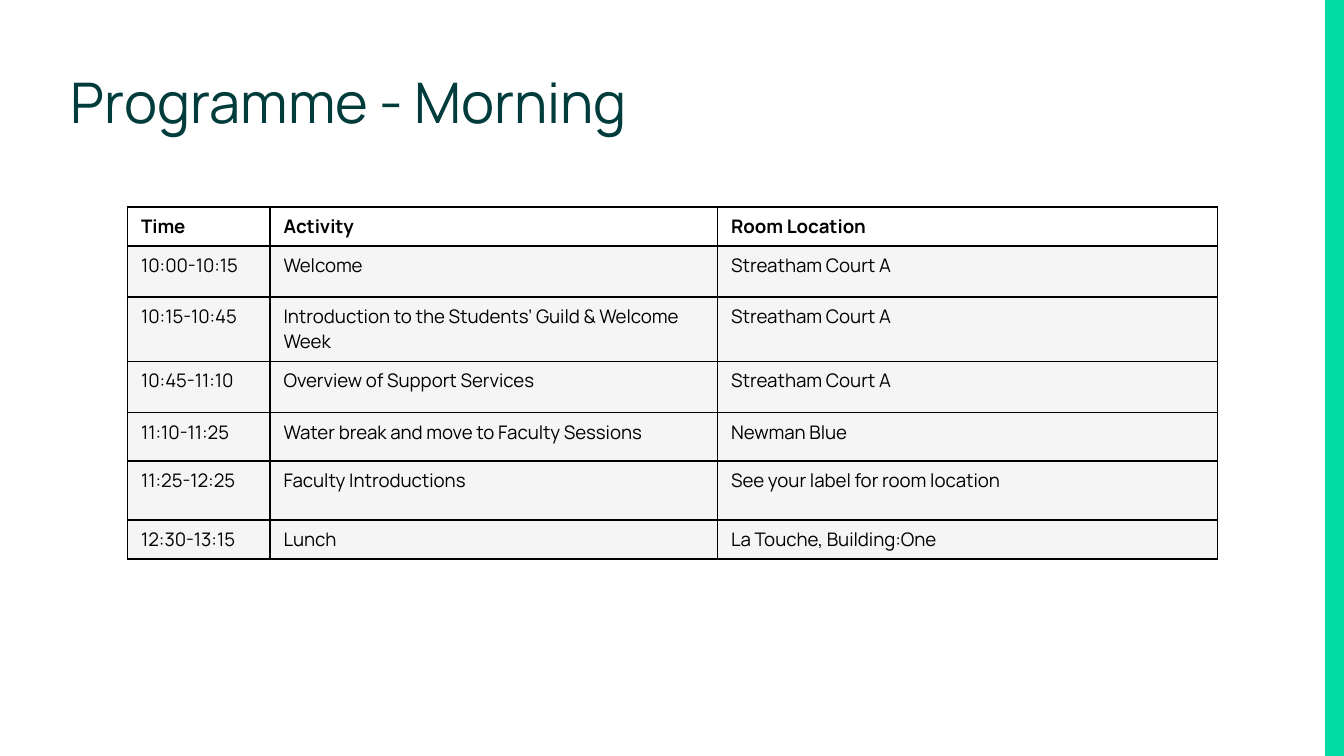
from typing import NamedTuple

from lxml import etree
from pptx import Presentation
from pptx.dml.color import RGBColor
from pptx.enum.shapes import MSO_SHAPE
from pptx.enum.text import MSO_ANCHOR
from pptx.oxml.ns import qn
from pptx.util import Inches, Pt

RECTANGLE = MSO_SHAPE.RECTANGLE
MIDDLE = MSO_ANCHOR.MIDDLE

WHITE = RGBColor(0xFF, 0xFF, 0xFF)
BLACK = RGBColor(0x00, 0x00, 0x00)
GREY = RGBColor(0xF5, 0xF5, 0xF5)
GREEN = RGBColor(0x01, 0xDC, 0xA5)
TEAL = RGBColor(0x00, 0x3C, 0x3B)

FONT = "Manrope"
SLIDE_W = 10
SLIDE_H = SLIDE_W * 9 / 16
BAR_W = 0.14
TABLE_LEFT, TABLE_TOP = 0.95, 1.54
COLUMN_WIDTHS = (1.06, 3.33, 3.72)
HEADINGS = ("Time", "Activity", "Room Location")
HEADER_H = 0.29


class Session(NamedTuple):
    time: str
    activity: str
    room: str
    height: float


SESSIONS = (
    Session("10:00-10:15", "Welcome", "Streatham Court A", 0.38),
    Session("10:15-10:45", "Introduction to the Students’ Guild & Welcome Week",
            "Streatham Court A", 0.48),
    Session("10:45-11:10", "Overview of Support Services", "Streatham Court A", 0.38),
    Session("11:10-11:25", "Water break and move to Faculty Sessions", "Newman Blue", 0.36),
    Session("11:25-12:25", "Faculty Introductions", "See your label for room location", 0.44),
    Session("12:30-13:15", "Lunch", "La Touche, Building:One", 0.29),
)


def style_text(p, size: float, color: RGBColor, bold: bool = False) -> None:
    for r in p.runs:
        r.font.name = FONT
        r.font.size = Pt(size)
        r.font.bold = bold
        r.font.color.rgb = color


def add_bar(s) -> None:
    sp = s.shapes.add_shape(RECTANGLE, Inches(SLIDE_W - BAR_W), 0,
                            Inches(BAR_W), Inches(SLIDE_H))
    sp.shadow.inherit = False
    sp.fill.solid()
    sp.fill.fore_color.rgb = GREEN
    sp.line.fill.background()


def add_title(s, text: str) -> None:
    sp = s.shapes.add_textbox(Inches(0.43), Inches(0.53), Inches(7.57), Inches(0.51))
    tf = sp.text_frame
    tf.word_wrap = True
    tf.vertical_anchor = MIDDLE
    tf.margin_top = tf.margin_bottom = 0
    p = tf.paragraphs[0]
    p.text = text
    p.line_spacing = 0.9
    style_text(p, 30, TEAL)


def add_borders(cell) -> None:
    tc_pr = cell._tc.get_or_add_tcPr()
    for i, side in enumerate(("lnL", "lnR", "lnT", "lnB")):
        ln = etree.Element(qn(f"a:{side}"), w=str(Pt(1)))
        fill = etree.SubElement(ln, qn("a:solidFill"))
        etree.SubElement(fill, qn("a:srgbClr"), val=str(BLACK))
        tc_pr.insert(i, ln)


def fill_cell(cell, text: str, header: bool) -> None:
    cell.text = text
    style_text(cell.text_frame.paragraphs[0], 10, BLACK, header)
    cell.fill.solid()
    cell.fill.fore_color.rgb = WHITE if header else GREY
    add_borders(cell)


def add_programme(s) -> None:
    heights = (HEADER_H, *(session.height for session in SESSIONS))
    rows = (HEADINGS, *(session[:3] for session in SESSIONS))
    table = s.shapes.add_table(
        len(rows), len(HEADINGS), Inches(TABLE_LEFT), Inches(TABLE_TOP),
        Inches(sum(COLUMN_WIDTHS)), Inches(sum(heights))).table
    table.horz_banding = False
    for column, width in zip(table.columns, COLUMN_WIDTHS):
        column.width = Inches(width)
    for i, (row, height, texts) in enumerate(zip(table.rows, heights, rows)):
        row.height = Inches(height)
        for cell, text in zip(row.cells, texts):
            fill_cell(cell, text, header=i == 0)


def main() -> None:
    prs = Presentation()
    prs.slide_width, prs.slide_height = Inches(SLIDE_W), Inches(SLIDE_H)
    s = prs.slides.add_slide(prs.slide_layouts[6])
    add_bar(s)
    add_title(s, "Programme - Morning")
    add_programme(s)
    prs.save("out.pptx")


if __name__ == "__main__":
    main()
